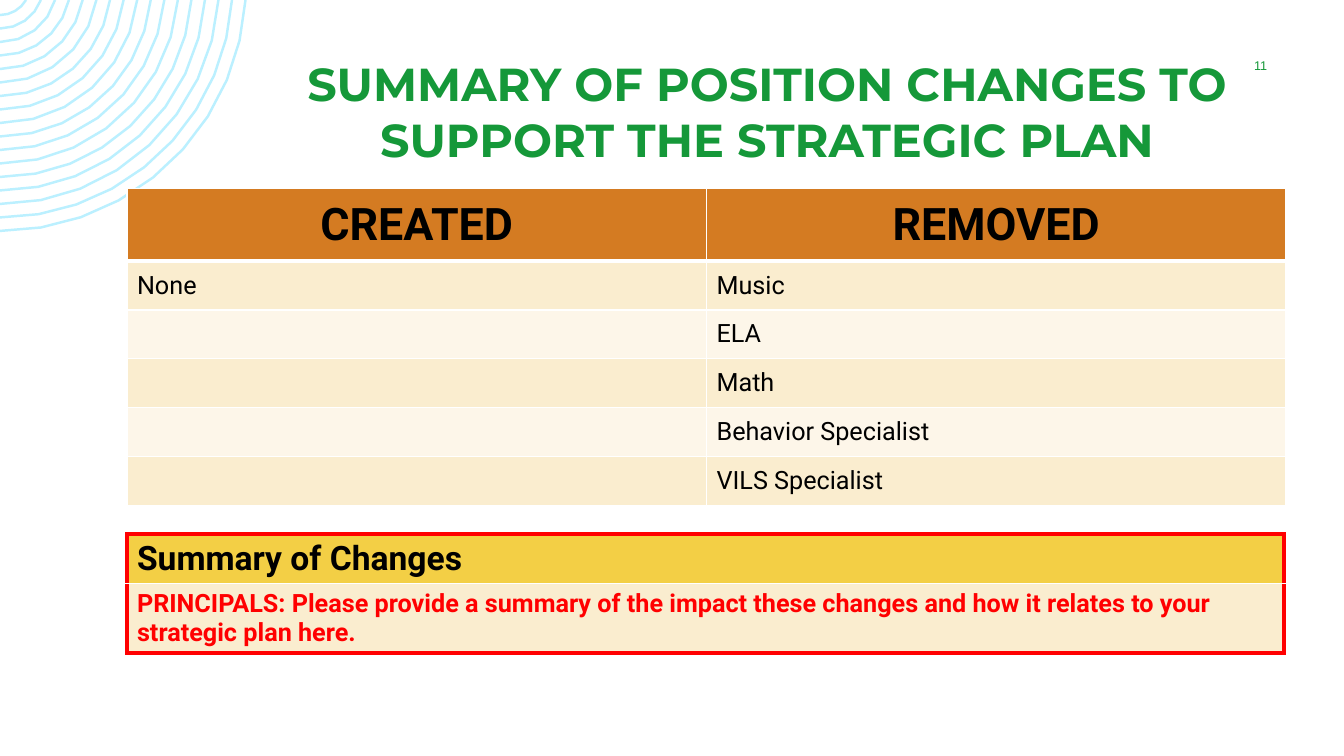
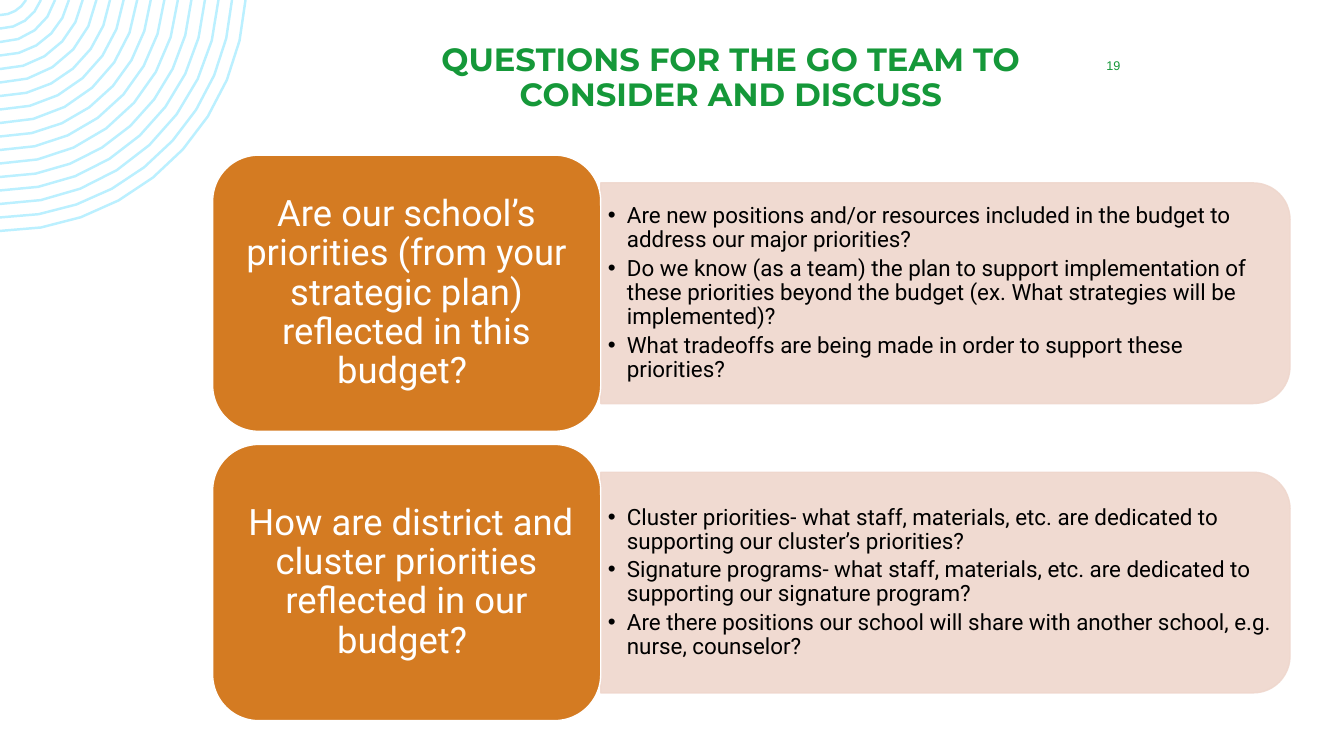
import dataclasses
import math

import pptx
import pptx.dml.color
import pptx.enum.shapes
import pptx.enum.text
import pptx.oxml
import pptx.oxml.ns
import pptx.util

Cm = pptx.util.Cm
Pt = pptx.util.Pt
Align = pptx.enum.text.PP_ALIGN
Anchor = pptx.enum.text.MSO_ANCHOR
Shape = pptx.enum.shapes.MSO_SHAPE


@dataclasses.dataclass(frozen=True)
class Theme:
    green: str = "159839"
    orange: str = "D47B22"
    cream: str = "FAEDCF"
    pale_cream: str = "FDF6E9"
    yellow: str = "F3CF45"
    red: str = "FF0000"
    blush: str = "EFD7CD"
    ring_blue: str = "BBF0FF"
    black: str = "000000"
    white: str = "FFFFFF"
    title_font: str = "Montserrat"
    body_font: str = "Roboto"
    number_font: str = "Arial"
    large_title: int = 33
    small_title: int = 23
    table_head: int = 32
    summary_head: int = 24
    table_body: int = 18
    question: int = 26
    bullet: int = 16
    number: int = 9


theme = Theme()

CHANGES_TITLE = "SUMMARY OF POSITION CHANGES TO SUPPORT THE STRATEGIC PLAN"
POSITIONS = [
    ("CREATED", "REMOVED"),
    ("None", "Music"),
    ("", "ELA"),
    ("", "Math"),
    ("", "Behavior Specialist"),
    ("", "VILS Specialist"),
]
SUMMARY = [
    ("Summary of Changes",),
    ("PRINCIPALS: Please provide a summary of the impact these changes "
     "and how it relates to your strategic plan here.",),
]
QUESTIONS_TITLE = "QUESTIONS FOR THE GO TEAM TO CONSIDER AND DISCUSS"
QUESTIONS = [
    ("Are our school’s priorities (from your strategic plan) reflected in this budget? ", [
        "Are new positions and/or resources included in the budget to address our major priorities?",
        "Do we know (as a team) the plan to support implementation of these priorities "
        "beyond the budget (ex. What strategies will be implemented)?",
        "What tradeoffs are being made in order to support these priorities?",
    ]),
    (" How are district and cluster priorities reflected in our budget? ", [
        "Cluster priorities- what staff, materials, etc. are dedicated to supporting "
        "our cluster’s priorities?",
        "Signature programs- what staff, materials, etc. are dedicated to supporting "
        "our signature program?",
        "Are there positions our school will share with another school, e.g. nurse, counselor?",
    ]),
]


def rgb(color):
    return pptx.dml.color.RGBColor.from_string(color)


def write_text(frame, text, *, size, color, font=theme.body_font, bold=False,
               align=Align.LEFT, spacing=1.0, after=0, hanging=None):
    lines = [text] if isinstance(text, str) else text
    for index, line in enumerate(lines):
        paragraph = frame.add_paragraph() if index else frame.paragraphs[0]
        paragraph.alignment = align
        paragraph.line_spacing = spacing
        paragraph.space_before = Pt(0)
        paragraph.space_after = Pt(after)
        if hanging:
            properties = paragraph._p.get_or_add_pPr()
            properties.set("marL", str(hanging))
            properties.set("indent", str(-hanging))
        run = paragraph.add_run()
        run.text = line
        run.font.name = font
        run.font.size = Pt(size)
        run.font.bold = bold
        run.font.color.rgb = rgb(color)


def set_frame(frame, anchor, horizontal=0.25, vertical=0.13):
    frame.word_wrap = True
    frame.auto_size = pptx.enum.text.MSO_AUTO_SIZE.NONE
    frame.vertical_anchor = anchor
    frame.margin_left = frame.margin_right = Cm(horizontal)
    frame.margin_top = frame.margin_bottom = Cm(vertical)


def place(shape, left, top, width, height):
    shape.left, shape.top = Cm(left), Cm(top)
    shape.width, shape.height = Cm(width), Cm(height)


def paint(shape, line, fill=None, width=1, opacity=None):
    shape.shadow.inherit = False
    if fill:
        shape.fill.solid()
        shape.fill.fore_color.rgb = rgb(fill)
    else:
        shape.fill.background()
    shape.line.color.rgb = rgb(line)
    shape.line.width = Pt(width)
    if opacity:
        for color in shape.element.spPr.iter(pptx.oxml.ns.qn("a:srgbClr")):
            color.append(pptx.oxml.parse_xml(
                f'<a:alpha {pptx.oxml.ns.nsdecls("a")} val="{opacity * 1000}"/>'))


def add_header(slide, title, box, size, spacing, number, number_box):
    place(slide.shapes.title, *box)
    set_frame(slide.shapes.title.text_frame, Anchor.TOP)
    write_text(slide.shapes.title.text_frame, title, size=size, color=theme.green,
               font=theme.title_font, bold=True, align=Align.CENTER, spacing=spacing)
    number_shape = slide.shapes.add_textbox(*map(Cm, number_box))
    set_frame(number_shape.text_frame, Anchor.MIDDLE)
    write_text(number_shape.text_frame, number, size=theme.number, color=theme.green,
               font=theme.number_font, align=Align.CENTER)


def add_master_rings(master, slide, count=17, center=-0.38, first=0.76, step=0.34):
    def arc(radius, steps):
        start = math.asin(-center / radius)
        angles = [start + (math.pi / 2 - start) * i / steps for i in range(steps + 1)]
        return [(Cm(radius * math.cos(a)), Cm(center + radius * math.sin(a))) for a in angles]

    arcs = [arc(first + index * step, 4 + index // 3) for index in range(count)]
    builder = slide.shapes.build_freeform(*arcs[0][0])
    for points in arcs:
        builder.move_to(*points[0])
        builder.add_line_segments(points[1:], close=False)
    rings = builder.convert_to_shape()
    paint(rings, theme.ring_blue, width=1.75)
    rings.element.nvSpPr.cNvPr.id = 20
    master.shapes.element.append(rings.element)


def set_borders(cell, borders):
    properties = cell._tc.get_or_add_tcPr()
    for index, side in enumerate("LRTB"):
        color, width = borders[side]
        properties.insert(index, pptx.oxml.parse_xml(
            f'<a:ln{side} {pptx.oxml.ns.nsdecls("a")} w="{Pt(width)}"><a:solidFill>'
            f'<a:srgbClr val="{color}"/></a:solidFill></a:ln{side}>'))


def add_grid(slide, rows, box, heights, fills, formats, borders, anchor):
    table = slide.shapes.add_table(len(rows), len(rows[0]), *map(Cm, box)).table
    for row_index, row in enumerate(rows):
        table.rows[row_index].height = Cm(heights[row_index])
        for column_index, text in enumerate(row):
            cell = table.cell(row_index, column_index)
            cell.vertical_anchor = anchor
            cell.fill.solid()
            cell.fill.fore_color.rgb = rgb(fills[row_index])
            set_borders(cell, borders[row_index])
            if text:
                write_text(cell.text_frame, text, **formats[row_index])


def build_changes(slide):
    add_header(slide, CHANGES_TITLE, (6.25, 1.27, 26.16, 3.73), theme.large_title, 1.0,
               "11", (30.4, 1.27, 2.74, 0.76))
    body_count = len(POSITIONS) - 1
    thin, thick, red = (theme.white, 1), (theme.white, 3), (theme.red, 3)
    plain = dict.fromkeys("LRTB", thin)
    framed = dict.fromkeys("LRTB", red)
    heading = dict(size=theme.table_head, color=theme.black, bold=True, align=Align.CENTER)
    entry = dict(size=theme.table_body, color=theme.black)
    bands = [(theme.cream, theme.pale_cream)[i % 2] for i in range(body_count)]
    add_grid(slide, POSITIONS, (3.2, 4.75, 29.21, 7.98),
             [1.83] + [1.23] * body_count, [theme.orange] + bands,
             [heading] + [entry] * body_count,
             [plain | {"B": thick}, plain | {"T": thick}] + [plain] * (body_count - 1),
             Anchor.MIDDLE)
    add_grid(slide, SUMMARY, (3.2, 13.46, 29.16, 2.99), [1.24, 1.75],
             [theme.yellow, theme.cream],
             [dict(size=theme.summary_head, color=theme.black, bold=True),
              dict(size=theme.table_body, color=theme.red, bold=True)],
             [framed | {"B": thin}, framed | {"T": thin}], Anchor.TOP)


def build_questions(slide):
    add_header(slide, QUESTIONS_TITLE, (8.81, 0.97, 19.23, 2.13), theme.small_title, 0.9,
               "19", (27.03, 1.27, 2.06, 0.76))
    left, top, width, height, pitch = 5.36, 3.91, 9.78, 6.96, 7.29
    panel_left, panel_width, panel_height = left + width, 17.37, 5.56
    bodies = [shape for shape in slide.placeholders if shape.placeholder_format.idx]
    for index, ((question, points), body) in enumerate(zip(QUESTIONS, bodies)):
        card_top = top + index * pitch
        middle = card_top + height / 2
        panel = slide.shapes.add_shape(
            Shape.ROUND_2_SAME_RECTANGLE,
            Cm(panel_left + (panel_width - panel_height) / 2), Cm(middle - panel_width / 2),
            Cm(panel_height), Cm(panel_width))
        panel.rotation = 90
        paint(panel, theme.blush, theme.blush, opacity=90)

        place(body, panel_left, middle - 2.5, 17.12, 5)
        set_frame(body.text_frame, Anchor.MIDDLE, 0.18, 0.08)
        write_text(body.text_frame, points, size=theme.bullet, color=theme.black,
                   spacing=0.9, after=3, hanging=Cm(0.48))
        slide.shapes.element.append(body.element)

        card = slide.shapes.add_shape(Shape.ROUNDED_RECTANGLE,
                                      *map(Cm, (left, card_top, width, height)))
        paint(card, theme.white, theme.orange)
        set_frame(card.text_frame, Anchor.MIDDLE, 0.28, 0.13)
        write_text(card.text_frame, question, size=theme.question, color=theme.white,
                   align=Align.CENTER, spacing=0.9)


def main():
    presentation = pptx.Presentation()
    presentation.slide_width, presentation.slide_height = Cm(33.87), Cm(19.05)
    layouts = presentation.slide_layouts
    changes = presentation.slides.add_slide(layouts.get_by_name("Title Only"))
    questions = presentation.slides.add_slide(layouts.get_by_name("Two Content"))
    add_master_rings(presentation.slide_master, changes)
    build_changes(changes)
    build_questions(questions)
    presentation.save("out.pptx")


if __name__ == "__main__":
    main()
